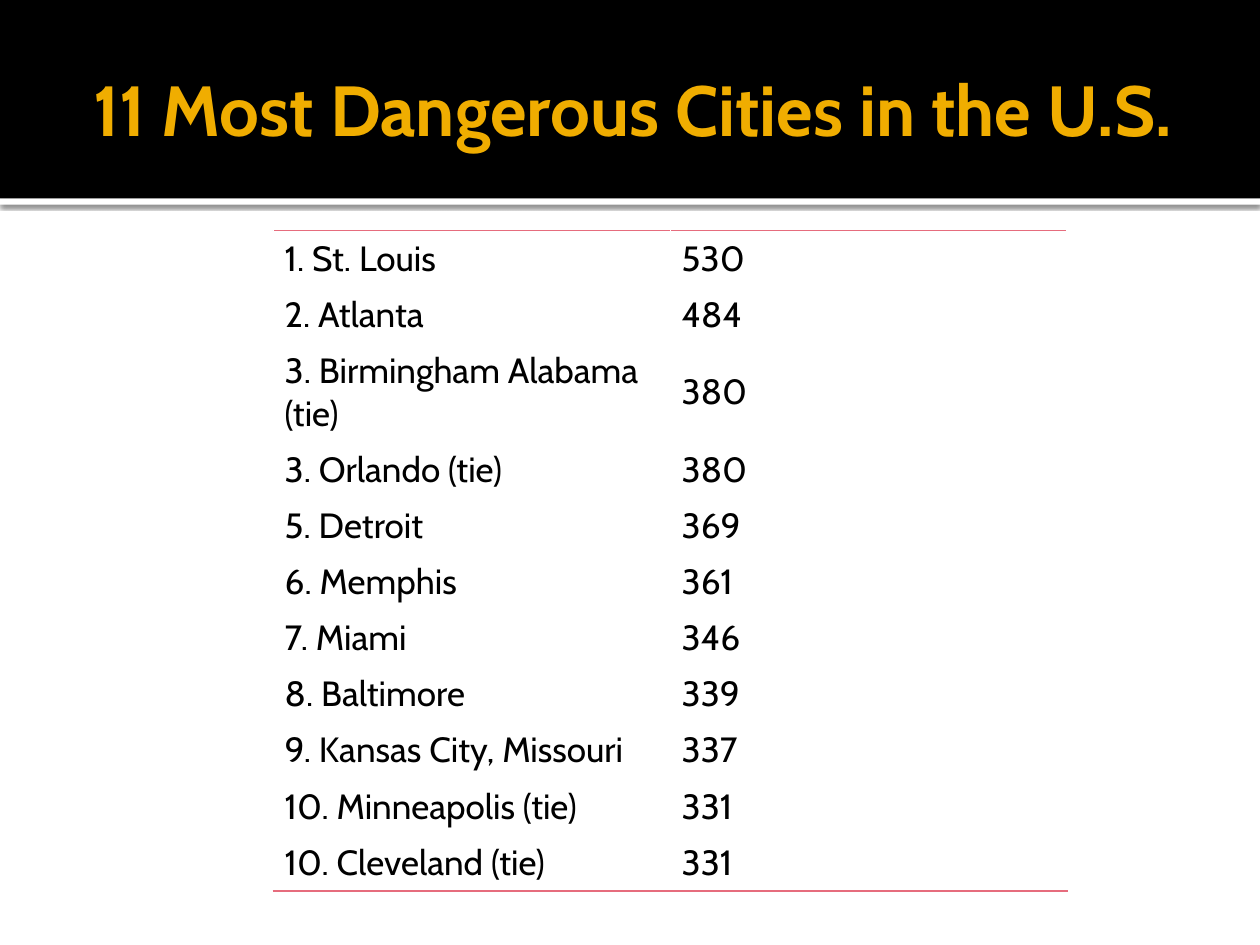
from dataclasses import dataclass

from lxml.etree import SubElement
from pptx import Presentation
from pptx.dml.color import RGBColor
from pptx.enum.shapes import MSO_SHAPE
from pptx.enum.text import MSO_ANCHOR, PP_ALIGN
from pptx.oxml import parse_xml
from pptx.oxml.ns import nsdecls, qn
from pptx.util import Inches, Pt


@dataclass(frozen=True)
class Theme:
    font: str = "Cabin"
    title_size: float = 40.5
    body_size: float = 20
    black: str = "000000"
    white: str = "FFFFFF"
    gold: str = "F0AD00"
    rose: str = "E66C7D"


THEME = Theme()
WIDTH, HEIGHT = Inches(10), Inches(7.5)
BAND_HEIGHT = 0.21 * HEIGHT
COLUMN_WIDTH = 0.315 * WIDTH
LINE_ROW, TWO_LINE_ROW = Pt(32.1), Pt(56.4)
WRAPPED_ROW = 2

CITIES = [
    ("1. St. Louis", "530"),
    ("2. Atlanta", "484"),
    ("3. Birmingham Alabama (tie)", "380"),
    ("3. Orlando (tie)", "380"),
    ("5. Detroit", "369"),
    ("6. Memphis", "361"),
    ("7. Miami", "346"),
    ("8. Baltimore", "339"),
    ("9. Kansas City, Missouri", "337"),
    ("10. Minneapolis (tie)", "331"),
    ("10. Cleveland (tie)", "331"),
]


def format_text(text_frame, size, color, bold=False):
    for paragraph in text_frame.paragraphs:
        for run in paragraph.runs:
            run.font.name = THEME.font
            run.font.size = Pt(size)
            run.font.bold = bold
            run.font.color.rgb = RGBColor.from_string(color)


def add_band(slide, top, height, color):
    """Add a plain rectangle across the full slide width."""
    band = slide.shapes.add_shape(
        MSO_SHAPE.RECTANGLE, 0, int(top), WIDTH, int(height))
    band.shadow.inherit = False
    band.fill.solid()
    band.fill.fore_color.rgb = RGBColor.from_string(color)
    band.line.fill.background()
    return band


def add_shadow(shape):
    effects = shape._element.spPr.find(qn("a:effectLst"))
    shadow = SubElement(effects, qn("a:outerShdw"), blurRad=str(Pt(2.5)),
                        dist=str(Pt(0.8)), dir="5400000", algn="tl",
                        rotWithShape="0")
    color = SubElement(shadow, qn("a:srgbClr"), val=THEME.black)
    SubElement(color, qn("a:alpha"), val="60000")


def add_title(slide, text):
    box = slide.shapes.add_textbox(
        int(0.05 * WIDTH), Inches(0.17), int(0.9 * WIDTH), Inches(1.37))
    text_frame = box.text_frame
    text_frame.word_wrap = True
    text_frame.vertical_anchor = MSO_ANCHOR.MIDDLE
    text_frame.margin_right = Inches(0.05)
    text_frame.text = text
    text_frame.paragraphs[0].alignment = PP_ALIGN.CENTER
    format_text(text_frame, THEME.title_size, THEME.gold, bold=True)


def add_border(cell, side):
    """Rule one side of a cell; side is lnT or lnB."""
    cell._tc.get_or_add_tcPr().insert(0, parse_xml(
        f'<a:{side} {nsdecls("a")} w="{Pt(1)}"><a:solidFill>'
        f'<a:srgbClr val="{THEME.rose}"/></a:solidFill></a:{side}>'))


def fill_cell(cell, text):
    cell.text = text
    cell.vertical_anchor = MSO_ANCHOR.MIDDLE
    cell.margin_left = cell.margin_right = Inches(0.09)
    cell.fill.background()
    format_text(cell.text_frame, THEME.body_size, THEME.black)


def add_city_table(slide, cities):
    heights = [LINE_ROW] * len(cities)
    heights[WRAPPED_ROW] = TWO_LINE_ROW
    table = slide.shapes.add_table(
        len(cities), 2, Inches(2.17), Inches(1.83),
        int(2 * COLUMN_WIDTH), sum(heights)).table
    table.first_row = table.horz_banding = False
    for column in table.columns:
        column.width = int(COLUMN_WIDTH)
    for row, height, values in zip(table.rows, heights, cities):
        row.height = height
        for cell, value in zip(row.cells, values):
            fill_cell(cell, value)
    for row_index, side in ((0, "lnT"), (len(cities) - 1, "lnB")):
        for cell in table.rows[row_index].cells:
            add_border(cell, side)


def main():
    presentation = Presentation()
    presentation.slide_width, presentation.slide_height = WIDTH, HEIGHT
    slide = presentation.slides.add_slide(presentation.slide_layouts[6])
    add_shadow(add_band(slide, BAND_HEIGHT, Inches(0.05), THEME.white))
    add_band(slide, 0, BAND_HEIGHT, THEME.black)
    add_city_table(slide, CITIES)
    add_title(slide, "11 Most Dangerous Cities in the U.S.")
    presentation.save("out.pptx")


if __name__ == "__main__":
    main()
